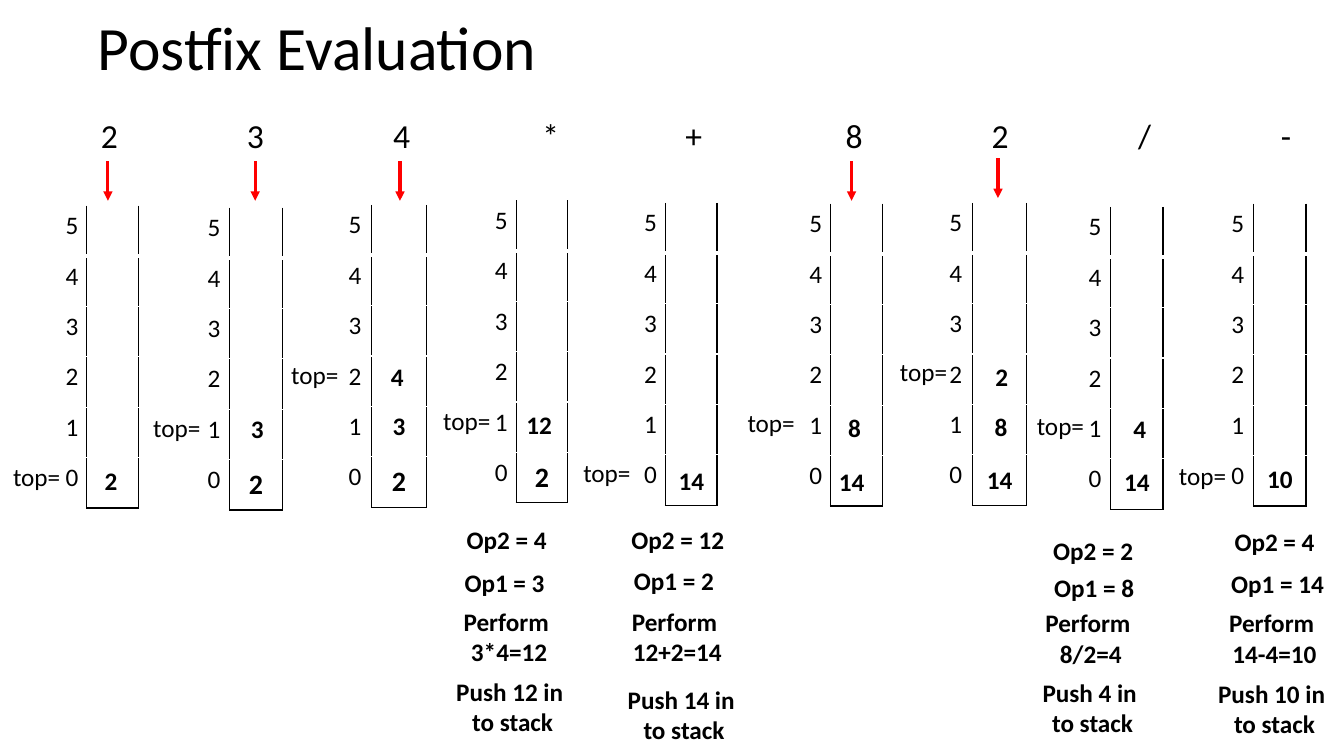
import dataclasses

import pptx
import pptx.dml.color
import pptx.enum.shapes
import pptx.enum.text
import pptx.oxml
import pptx.oxml.ns
import pptx.util
from lxml import etree

Cm = pptx.util.Cm
Pt = pptx.util.Pt
RGB = pptx.dml.color.RGBColor.from_string
CENTER = pptx.enum.text.PP_ALIGN.CENTER
LEFT = pptx.enum.text.PP_ALIGN.LEFT
MIDDLE = pptx.enum.text.MSO_ANCHOR.MIDDLE
TOP = pptx.enum.text.MSO_ANCHOR.TOP


@dataclasses.dataclass(frozen=True)
class Theme:
    font: str = "Calibri"
    ink: str = "000000"
    paper: str = "FFFFFF"
    arrow: str = "FF0000"
    title: int = 44
    token: int = 24
    large: int = 20
    body: int = 18


THEME = Theme()
NO_TABLE_STYLE = "{2D5ABB26-0587-4C30-8999-92F81FD0307C}"
SLOTS = 6
SLOT_HEIGHT = 1.27
LINE_HEIGHT = 1.02
PAIR_HEIGHT = 1.8

TOKENS = ["2", "3", "4", "*", "+", "8", "2", "/", "-"]
TOKEN_TABS = [1.48, 5.16, 8.85, 12.61, 16.21, 20.25, 23.93, 27.62, 31.22]

ARROWS = [(2.72, 4.06), (6.43, 4.06), (10.08, 4.06), (21.46, 4.06), (25.15, 3.99)]

# left, top, label width, value width, slot values, pointer, loose values
STACKS = [
    (1.4, 5.18, 0.79, 1.3, {}, (0.08, 11.51), [("2", 2.39, 11.61, 0.81)]),
    (4.98, 5.23, 0.81, 1.32, {0: "2"}, (3.61, 10.26), [("3", 5.94, 10.29, 1.09)]),
    (8.53, 5.16, 0.84, 1.37, {0: "2", 1: "3"}, (7.09, 8.92), [("4", 9.47, 8.97, 1.09)]),
    (12.22, 5.05, 0.79, 1.3, {0: "2"}, (10.92, 10.08), [("12", 12.9, 10.19, 1.37)]),
    (15.98, 5.11, 0.79, 1.3, {}, (14.45, 11.4), [("14", 16.74, 11.61, 1.37)]),
    (20.14, 5.13, 0.79, 1.3, {}, (18.59, 10.13),
     [("14", 20.78, 11.63, 1.37), ("8", 20.85, 10.26, 1.37)]),
    (23.67, 5.11, 0.84, 1.35, {}, (22.43, 8.86),
     [("8", 24.54, 10.24, 1.37), ("14", 24.51, 11.58, 1.37), ("2", 24.56, 8.99, 1.37)]),
    (27.18, 5.21, 0.81, 1.32, {}, (25.88, 10.21),
     [("14", 27.97, 11.63, 1.37), ("4", 28.04, 10.29, 1.37)]),
    (30.78, 5.13, 0.81, 1.32, {}, (29.46, 11.48), [("10", 31.57, 11.56, 1.37)]),
]

STEPS = [
    ("Op2 = 4", 10.85, 13.08, 3.84),
    ("Op1 = 3", 11.33, 14.17, 2.77),
    ("Perform \n3*4=12", 11.38, 15.16, 2.9),
    ("Push 12 in \nto stack", 11.18, 16.92, 3.48),
    ("Op2 = 12", 15.16, 13.08, 3.84),
    ("Op1 = 2", 15.6, 14.12, 2.77),
    ("Perform \n12+2=14", 15.62, 15.16, 2.9),
    ("Push 14 in \nto stack", 15.21, 17.12, 4.06),
    ("Op2 = 2", 25.63, 13.36, 3.84),
    ("Op1 = 8", 26.19, 14.3, 2.77),
    ("Perform \n8/2=4", 24.66, 15.19, 5.66),
    ("Push 4 in \nto stack", 25.4, 16.94, 4.27),
    ("Op2 = 4", 30.2, 13.13, 3.84),
    ("Op1 = 14", 30.58, 14.2, 3.23),
    ("Perform \n14-4=10", 30.23, 15.19, 3.78),
    ("Push 10 in \nto stack", 30.23, 16.97, 3.78),
]


def apply(target, formats):
    for name, value in formats.items():
        setattr(target, name, value)


def write(frame, text, size=THEME.body, bold=False, align=LEFT, spacing=1.0):
    for index, line in enumerate(text.split("\n")):
        para = frame.add_paragraph() if index else frame.paragraphs[0]
        apply(para, {"alignment": align, "line_spacing": spacing})
        span = para.add_run()
        span.text = line
        apply(span.font, {"name": THEME.font, "size": Pt(size), "bold": bold})
        span.font.color.rgb = RGB(THEME.ink)


def add_text(page, text, left, top, width, height, wrap=True, anchor=TOP, **style):
    box = page.shapes.add_textbox(Cm(left), Cm(top), Cm(width), Cm(height))
    apply(box.text_frame, {"word_wrap": wrap, "vertical_anchor": anchor})
    write(box.text_frame, text, **style)
    return box


def add_bold(page, text, left, top, width):
    height = PAIR_HEIGHT if "\n" in text else LINE_HEIGHT
    add_text(page, text, left, top, width, height, bold=True, align=CENTER)


def add_expression(page):
    text = "".join("\t" + token for token in TOKENS)
    box = add_text(page, text, 0.81, 2.77, 32.26, 1.27, size=THEME.token)
    properties = box.text_frame.paragraphs[0]._p.get_or_add_pPr()
    stops = etree.SubElement(properties, pptx.oxml.ns.qn("a:tabLst"))
    for position in TOKEN_TABS:
        etree.SubElement(stops, pptx.oxml.ns.qn("a:tab"), pos=str(Cm(position)), algn="l")


def set_borders(cell, borders):
    properties = cell._tc.get_or_add_tcPr()
    for side in "LRTB":
        if side in borders:
            color, width = borders[side]
            line = etree.SubElement(
                properties, pptx.oxml.ns.qn("a:ln" + side), w=str(Pt(width)))
            fill = etree.SubElement(line, pptx.oxml.ns.qn("a:solidFill"))
            etree.SubElement(fill, pptx.oxml.ns.qn("a:srgbClr"), val=color)
    cell.fill.background()


def add_stack(page, left, top, label_width, value_width, values):
    frame = page.shapes.add_table(
        SLOTS, 2, Cm(left), Cm(top), Cm(label_width + value_width), Cm(SLOTS * SLOT_HEIGHT))
    table = frame.table
    apply(table, {"first_row": False, "horz_banding": False})
    table._tbl.tblPr.find(pptx.oxml.ns.qn("a:tableStyleId")).text = NO_TABLE_STYLE
    for column, width in zip(table.columns, (label_width, value_width)):
        column.width = Cm(width)
    edge, gap = (THEME.ink, 1), (THEME.paper, 1)
    for row in range(SLOTS):
        slot = SLOTS - 1 - row
        label, value = table.cell(row, 0), table.cell(row, 1)
        write(label.text_frame, str(slot))
        set_borders(label, {"R": edge})
        borders = {"L": edge, "R": edge, "B": gap if slot else edge}
        if row:
            borders["T"] = gap
        else:
            borders["B"] = (THEME.paper, 3)
        set_borders(value, borders)
        if slot in values:
            value.vertical_anchor = TOP if slot else MIDDLE
            size = THEME.body if slot else THEME.large
            write(value.text_frame, values[slot], size=size, bold=True, align=CENTER)


def add_arrow(page, x, top):
    arrow = page.shapes.add_connector(
        pptx.enum.shapes.MSO_CONNECTOR.STRAIGHT, Cm(x), Cm(top), Cm(x), Cm(top + 1))
    arrow.line.color.rgb = RGB(THEME.arrow)
    arrow.line.width = Pt(2.25)
    etree.SubElement(arrow.line._get_or_add_ln(), pptx.oxml.ns.qn("a:tailEnd"), type="triangle")
    etree.SubElement(arrow._element.spPr, pptx.oxml.ns.qn("a:effectLst"))


def main():
    deck = pptx.Presentation()
    apply(deck, {"slide_width": Cm(33.87), "slide_height": Cm(19.05)})
    page = deck.slides.add_slide(deck.slide_layouts[6])
    add_text(page, "Postfix Evaluation", 2.21, 0.3, 29.21, 1.93,
             anchor=MIDDLE, size=THEME.title, spacing=0.9)
    add_expression(page)
    for left, top, label_width, value_width, values, pointer, loose in STACKS:
        add_stack(page, left, top, label_width, value_width, values)
        add_text(page, "top=", *pointer, 1.73, LINE_HEIGHT, wrap=False)
        for value in loose:
            add_bold(page, *value)
    for step in STEPS:
        add_bold(page, *step)
    for arrow in ARROWS:
        add_arrow(page, *arrow)
    deck.save("out.pptx")


if __name__ == "__main__":
    main()
